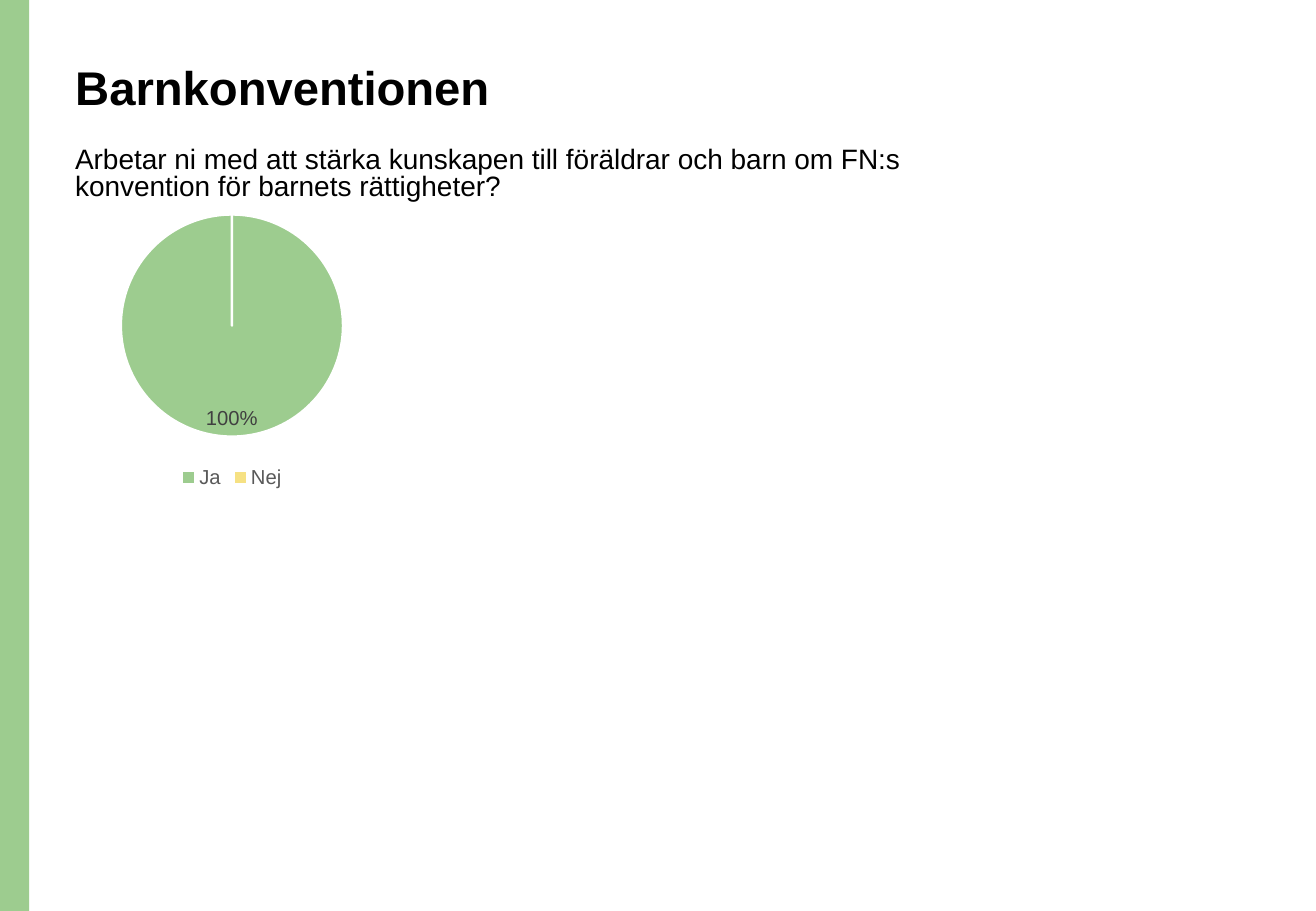
from pptx import Presentation, util as u
from pptx.chart.data import CategoryChartData
from pptx.dml.color import RGBColor
from pptx.enum import chart as charts, shapes, text
from pptx.oxml import parse_xml
from pptx.oxml.ns import nsdecls

Pt = u.Pt
GREEN = RGBColor(0x9D, 0xCC, 0x8F)
YELLOW = RGBColor(0xF6, 0xE1, 0x83)
WHITE = RGBColor(0xFF, 0xFF, 0xFF)
BLACK = RGBColor(0x00, 0x00, 0x00)
LEGEND_GREY = RGBColor(0x59, 0x59, 0x59)
LABEL_GREY = RGBColor(0x40, 0x40, 0x40)
FONT = "Arial"
WIDTH, HEIGHT = 780, 540
MARGIN = 37.4


def style_font(font, size, color, bold=False):
    """Set the typeface, size, colour and weight of a font."""
    font.name = FONT
    font.size = Pt(size)
    font.color.rgb = color
    font.bold = bold


def write(frame, words, size=12, color=BLACK, bold=False, spacing=1.0):
    """Fill a text frame with one left-aligned, top-anchored paragraph."""
    frame.word_wrap = True
    frame.auto_size = text.MSO_AUTO_SIZE.NONE
    frame.vertical_anchor = text.MSO_ANCHOR.TOP
    frame.text = words
    paragraph = frame.paragraphs[0]
    paragraph.alignment = text.PP_ALIGN.LEFT
    paragraph.line_spacing = spacing
    style_font(paragraph.runs[0].font, size, color, bold)


def add_side_band(slide, left, top, width, height):
    """Draw the green band along the slide edge."""
    band = slide.shapes.add_shape(
        shapes.MSO_SHAPE.RECTANGLE, Pt(left), Pt(top), Pt(width), Pt(height))
    band.shadow.inherit = False
    band.fill.solid()
    band.fill.fore_color.rgb = GREEN
    band.line.fill.background()


def add_heading(slide, left, top, width, height):
    """Place the title and the survey question below it."""
    title = slide.shapes.title
    title.left, title.top = Pt(left), Pt(top)
    title.width, title.height = Pt(width), Pt(height)
    write(title.text_frame, "Barnkonventionen", size=28, bold=True, spacing=0.9)
    question = slide.shapes.add_textbox(
        Pt(left), Pt(top + 49.7), Pt(width * 0.75), Pt(41))
    write(question.text_frame,
          "Arbetar ni med att stärka kunskapen till föräldrar och barn om "
          "FN:s konvention för barnets rättigheter?", size=16.6, spacing=0.8)


def set_plot_area(chart, **fractions):
    """Fix the inner plot area as fractions of the chart box."""
    area = chart.element.chart.plotArea
    for layout in area.findall("{*}layout"):
        area.remove(layout)
    modes = '<c:xMode val="edge"/><c:yMode val="edge"/>'
    sizes = "".join(f'<c:{key} val="{value}"/>' for key, value in fractions.items())
    area.insert(0, parse_xml(
        f'<c:layout {nsdecls("c")}><c:manualLayout><c:layoutTarget val="inner"/>'
        f'{modes}{sizes}</c:manualLayout></c:layout>'))


def add_answer_pie(slide, left, top, width, height):
    """Chart the share of yes and no answers."""
    answers = CategoryChartData(number_format="0%")
    answers.categories = ["Ja", "Nej"]
    answers.add_series("Series 1", (1, 0))
    chart = slide.shapes.add_chart(
        charts.XL_CHART_TYPE.PIE, Pt(left), Pt(top), Pt(width), Pt(height),
        answers).chart
    chart.has_title = False
    style_font(chart.font, 10, BLACK)
    chart.has_legend = True
    chart.legend.position = charts.XL_LEGEND_POSITION.BOTTOM
    chart.legend.include_in_layout = False
    style_font(chart.legend.font, 12, LEGEND_GREY)
    set_plot_area(chart, x=0.17, y=0.06, w=0.66, h=0.75)

    pie = chart.plots[0]
    pie.vary_by_categories = True
    for index, color in enumerate((GREEN, YELLOW)):
        slice_format = pie.series[0].points[index].format
        slice_format.fill.solid()
        slice_format.fill.fore_color.rgb = color
        slice_format.line.color.rgb = WHITE
        slice_format.line.width = Pt(1.5)
    labels = pie.series[0].data_labels
    labels.show_value = True
    labels.show_percentage = False
    labels.number_format = "0%;;"
    labels.number_format_is_linked = False
    labels.position = charts.XL_LABEL_POSITION.INSIDE_END
    style_font(labels.font, 12, LABEL_GREY)


def main():
    """Build and save the slide."""
    deck = Presentation()
    deck.slide_width, deck.slide_height = Pt(WIDTH), Pt(HEIGHT)
    slide = deck.slides.add_slide(deck.slide_layouts[5])
    add_side_band(slide, 0, 0, 17.3, HEIGHT)
    add_heading(slide, MARGIN, 34.6, 672.5, 73.4)
    add_answer_pie(slide, MARGIN, 116.6, 200.2, 175.7)
    deck.save("out.pptx")


if __name__ == "__main__":
    main()
